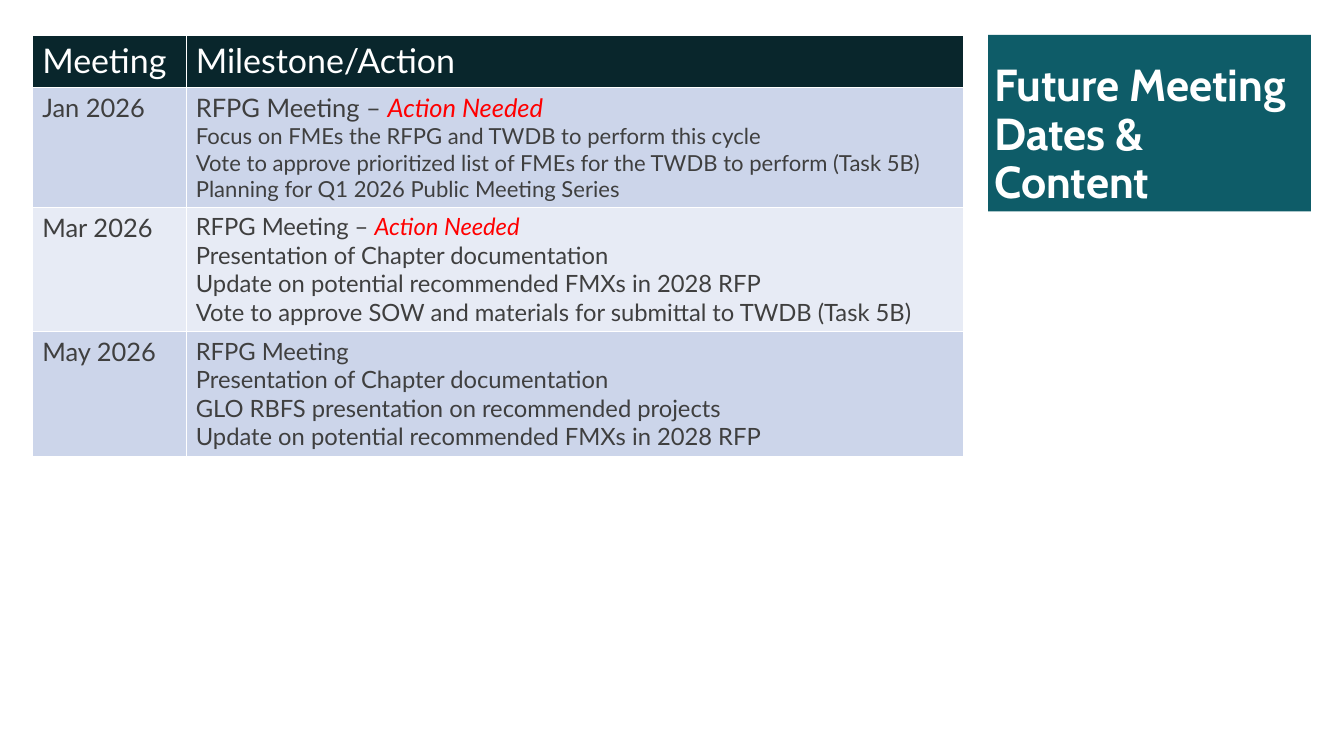
from pptx import Presentation
from pptx import util as u
from pptx.dml.color import RGBColor
from pptx.enum import text

COLORS = {
    "teal": "0E5C68", "header": "09262C", "band": "CCD5EA", "light": "E7EBF5",
    "white": "FFFFFF", "body": "3F3F3F", "red": "FF0000",
}
HEADINGS = ["Meeting", "Milestone/Action"]
ACTION = "Action Needed"
MEETINGS = [
    ("Jan 2026", ACTION, 30, 26, [
        "Focus on FMEs the RFPG and TWDB to perform this cycle",
        "Vote to approve prioritized list of FMEs for the TWDB to perform (Task 5B)",
        "Planning for Q1 2026 Public Meeting Series"]),
    ("Mar 2026", ACTION, 28, 28, [
        "Presentation of Chapter documentation",
        "Update on potential recommended FMXs in 2028 RFP",
        "Vote to approve SOW and materials for submittal to TWDB (Task 5B)"]),
    ("May 2026", "", 28, 28, [
        "Presentation of Chapter documentation",
        "GLO RBFS presentation on recommended projects",
        "Update on potential recommended FMXs in 2028 RFP"]),
]


def add_run(p, content, *, size, color="body", font="Lato", bold=False, italic=False):
    r = p.add_run()
    r.text = content
    r.font.name, r.font.size = font, u.Pt(size)
    r.font.bold, r.font.italic = bold, italic
    r.font.color.rgb = RGBColor.from_string(COLORS[color])


def set_fill(obj, color):
    obj.fill.solid()
    obj.fill.fore_color.rgb = RGBColor.from_string(COLORS[color])


class Deck:
    """Holds the presentation style and the current slide."""

    def __init__(self, width, height):
        self.prs = Presentation()
        self.prs.slide_width, self.prs.slide_height = u.Cm(width), u.Cm(height)
        self.s = self.prs.slides.add_slide(self.prs.slide_layouts[5])

    def title(self, content, left, top, width, height):
        sp = self.s.shapes.title
        sp.left, sp.top, sp.width, sp.height = map(u.Cm, (left, top, width, height))
        set_fill(sp, "teal")
        tf = sp.text_frame
        tf.word_wrap = True
        tf.auto_size = text.MSO_AUTO_SIZE.NONE
        tf.vertical_anchor = text.MSO_ANCHOR.BOTTOM
        p = tf.paragraphs[0]
        p.alignment, p.line_spacing = text.PP_ALIGN.LEFT, 0.9
        add_run(p, content, size=52.8, color="white", font="Cabin", bold=True)

    def table(self, left, top, widths, heights):
        box = map(u.Cm, (left, top, sum(widths), sum(heights)))
        tbl = self.s.shapes.add_table(len(heights), len(widths), *box).table
        for col, width in zip(tbl.columns, widths):
            col.width = u.Cm(width)
        for row, height in zip(tbl.rows, heights):
            row.height = u.Cm(height)
        return tbl

    def cell(self, cell, fill):
        set_fill(cell, fill)
        cell.margin_left = cell.margin_right = u.Cm(0.41)
        cell.margin_top = cell.margin_bottom = u.Cm(0.2)
        return cell.text_frame


def main():
    deck = Deck(55.86, 31.42)
    deck.title("Future Meeting Dates & Content", 41.07, 1.45, 13.41, 7.34)
    tbl = deck.table(1.35, 1.45, [6.38, 32.31], [2.2, 4.98, 5.16, 5.16])

    for col, heading in enumerate(HEADINGS):
        tf = deck.cell(tbl.cell(0, col), "header")
        add_run(tf.paragraphs[0], heading, size=40, color="white")

    for row, (date, action, lead_size, size, items) in enumerate(MEETINGS, 1):
        fill = "band" if row % 2 else "light"
        tf = deck.cell(tbl.cell(row, 0), fill)
        add_run(tf.paragraphs[0], date, size=30)
        tf = deck.cell(tbl.cell(row, 1), fill)
        p = tf.paragraphs[0]
        add_run(p, "RFPG Meeting – " if action else "RFPG Meeting", size=lead_size)
        if action:
            add_run(p, action, size=lead_size, color="red", italic=True)
        for item in items:
            add_run(tf.add_paragraph(), item, size=size)

    deck.prs.save("out.pptx")


if __name__ == "__main__":
    main()
